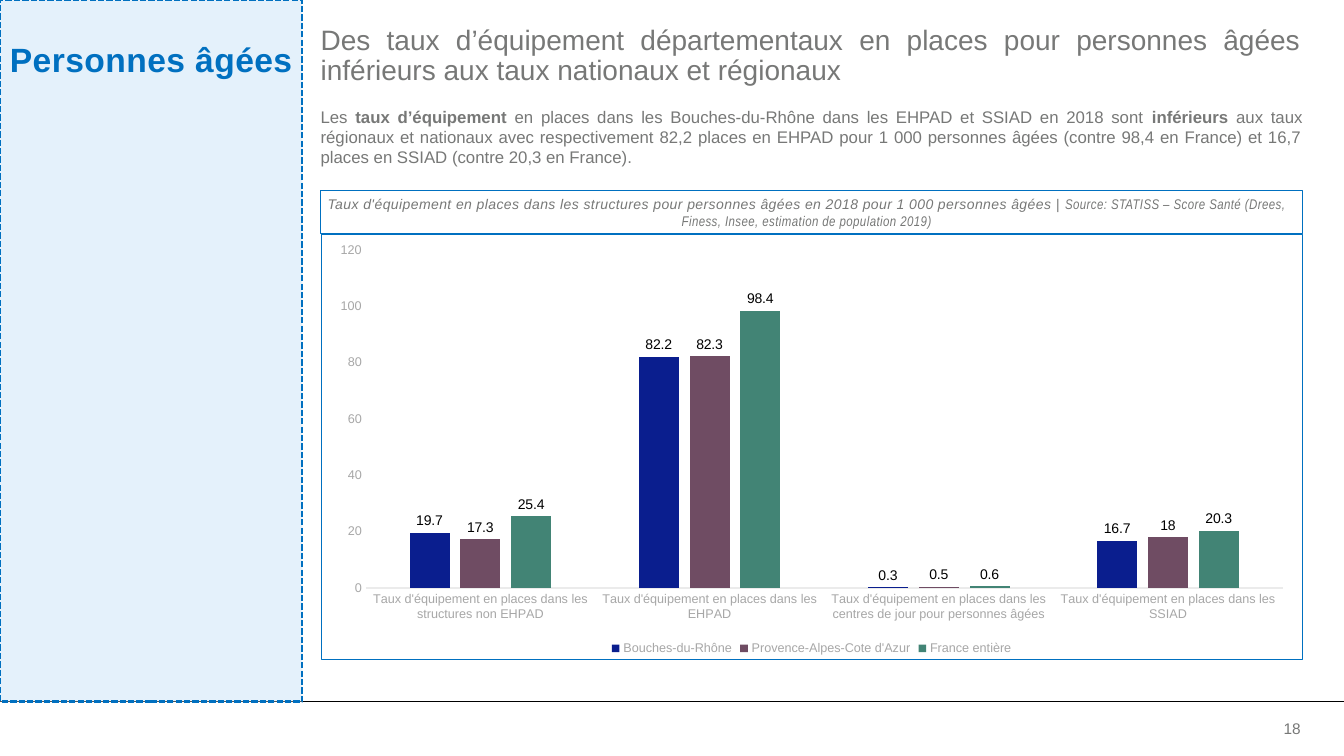
from lxml.etree import SubElement
from pptx import Presentation
from pptx.chart.data import CategoryChartData
from pptx.dml.color import RGBColor
from pptx.enum.chart import XL_CHART_TYPE, XL_LABEL_POSITION, XL_LEGEND_POSITION, XL_TICK_MARK
from pptx.enum.dml import MSO_LINE
from pptx.enum.shapes import MSO_CONNECTOR, MSO_SHAPE
from pptx.enum.text import MSO_ANCHOR, PP_ALIGN
from pptx.oxml import parse_xml
from pptx.oxml.ns import nsdecls, qn
from pptx.util import Inches, Pt

BLUE, PALE_BLUE, GREY, LIGHT_GREY, AXIS_GREY, BLACK = (
    "0070C0", "E4F1FB", "777877", "A7A7A7", "EBEBEB", "000000")

SECTION = [("Personnes âgées", {"bold": True})]
TITLE = [("Des taux d’équipement départementaux en places pour personnes âgées "
          "inférieurs aux taux nationaux et régionaux", {})]
SUMMARY = [
    ("Les ", {}),
    ("taux d’équipement ", {"bold": True}),
    ("en places dans les Bouches-du-Rhône dans les EHPAD et SSIAD en 2018 sont ", {}),
    ("inférieurs ", {"bold": True}),
    ("aux taux régionaux et nationaux avec respectivement 82,2 places en EHPAD pour "
     "1 000 personnes âgées (contre 98,4 en France) et 16,7 places en SSIAD "
     "(contre 20,3 en France).", {}),
]
CAPTION = [
    ("Taux d'équipement en places dans les structures pour personnes âgées en 2018 "
     "pour 1 000 personnes âgées | ", {"italic": True}),
    ("Source: STATISS – Score Santé (Drees, Finess, Insee, estimation de population 2019)",
     {"italic": True, "name": "Arial Narrow"}),
]
PAGE_NUMBER = [("18", {})]
CATEGORIES = ["Taux d'équipement en places dans les " + structure for structure in (
    "structures non EHPAD", "EHPAD", "centres de jour pour personnes âgées", "SSIAD")]
SERIES = [
    ("Bouches-du-Rhône", "0A1E8E", (19.7, 82.2, 0.3, 16.7)),
    ("Provence-Alpes-Cote d'Azur", "6F4C63", (17.3, 82.3, 0.5, 18)),
    ("France entière", "428475", (25.4, 98.4, 0.6, 20.3)),
]

WIDTH, HEIGHT = 13.33, 7.5
FOOTER_TOP = 6.96
SIDEBAR_WIDTH = 3
LEFT, CONTENT_WIDTH = 3.18, 9.74
CAPTION_TOP, CAPTION_HEIGHT, CHART_HEIGHT = 1.89, 0.43, 4.23


def color(hex_string):
    return RGBColor.from_string(hex_string)


def set_attributes(target, values):
    for name, value in values.items():
        setattr(target, name, value)


def style_font(font, size, hex_string, **extra):
    set_attributes(font, {"name": "Arial", "size": Pt(size), **extra})
    font.color.rgb = color(hex_string)


def write(shape, runs, size, align, insets, hex_string=GREY,
          anchor=MSO_ANCHOR.TOP, line_spacing=1.0, letter_spacing=0):
    """Fill a shape with one paragraph; insets are left, top, right, bottom in inches."""
    frame = shape.text_frame
    left, top, right, bottom = map(Inches, insets)
    set_attributes(frame, {
        "word_wrap": True, "vertical_anchor": anchor, "margin_left": left,
        "margin_top": top, "margin_right": right, "margin_bottom": bottom})
    paragraph = frame.paragraphs[0]
    set_attributes(paragraph, {"alignment": align, "line_spacing": line_spacing})
    for text, emphasis in runs:
        run = paragraph.add_run()
        run.text = text
        style_font(run.font, size, hex_string, **emphasis)
        if letter_spacing:
            run._r.get_or_add_rPr().set("spc", str(int(letter_spacing * 100)))


def add_text(slide, box, *args, **options):
    write(slide.shapes.add_textbox(*map(Inches, box)), *args, **options)


def add_panel(slide, box, line_width, fill=None, dash=None):
    panel = slide.shapes.add_shape(MSO_SHAPE.RECTANGLE, *map(Inches, box))
    panel.shadow.inherit = False
    if fill:
        panel.fill.solid()
        panel.fill.fore_color.rgb = color(fill)
    else:
        panel.fill.background()
    panel.line.color.rgb = color(BLUE)
    set_attributes(panel.line, {"width": Pt(line_width), "dash_style": dash})
    return panel


def add_footer_line(slide):
    line = slide.shapes.add_connector(
        MSO_CONNECTOR.STRAIGHT, 0, Inches(FOOTER_TOP), Inches(WIDTH), Inches(FOOTER_TOP))
    line.line.color.rgb = color(BLACK)
    line.line.width = Pt(0.75)
    SubElement(line._element.spPr, qn("a:effectLst"))


def add_rate_chart(slide, box):
    data = CategoryChartData()
    data.categories = CATEGORIES
    for name, _, values in SERIES:
        data.add_series(name, values)
    chart = slide.shapes.add_chart(
        XL_CHART_TYPE.COLUMN_CLUSTERED, *map(Inches, box), data).chart
    style_font(chart.font, 10, BLACK)
    set_attributes(chart, {"has_title": False, "has_legend": True})
    set_attributes(chart.legend, {
        "position": XL_LEGEND_POSITION.BOTTOM, "include_in_layout": False})
    style_font(chart.legend.font, 9, LIGHT_GREY)

    for axis in (chart.category_axis, chart.value_axis):
        set_attributes(axis, {
            "has_major_gridlines": False, "major_tick_mark": XL_TICK_MARK.NONE,
            "minor_tick_mark": XL_TICK_MARK.NONE})
        style_font(axis.tick_labels.font, 9, LIGHT_GREY)
    chart.category_axis.format.line.color.rgb = color(AXIS_GREY)
    chart.category_axis.format.line.width = Pt(0.75)
    chart.value_axis.format.line.fill.background()
    set_attributes(chart.value_axis, {
        "minimum_scale": 0, "maximum_scale": 120, "major_unit": 20})

    plot = chart.plots[0]
    set_attributes(plot, {"gap_width": 219, "overlap": -27, "vary_by_categories": False})
    for series, (_, fill, _) in zip(plot.series, SERIES):
        series.format.fill.solid()
        series.format.fill.fore_color.rgb = color(fill)
        set_attributes(series.data_labels, {
            "show_value": True, "position": XL_LABEL_POSITION.OUTSIDE_END})
        style_font(series.data_labels.font, 10, BLACK)

    border = parse_xml(
        f'<c:spPr {nsdecls("c", "a")}><a:noFill/><a:ln w="{Pt(0.75)}"><a:solidFill>'
        f'<a:srgbClr val="{BLUE}"/></a:solidFill></a:ln></c:spPr>')
    chart._chartSpace.find(qn("c:chart")).addnext(border)


def main():
    presentation = Presentation()
    set_attributes(presentation, {
        "slide_width": Inches(WIDTH), "slide_height": Inches(HEIGHT)})
    slide = presentation.slides.add_slide(presentation.slide_layouts[6])

    add_footer_line(slide)
    add_text(slide, (LEFT, 0.26, 9.82, 0.65), TITLE, 20, PP_ALIGN.JUSTIFY,
             (0, 0, 0.1, 0.05), line_spacing=0.9)
    sidebar = add_panel(slide, (0, 0, SIDEBAR_WIDTH, FOOTER_TOP), 1.5,
                        PALE_BLUE, MSO_LINE.SQUARE_DOT)
    write(sidebar, SECTION, 24, PP_ALIGN.CENTER, (0.08, 0.39, 0.08, 0.08),
          BLUE, letter_spacing=0.3)
    caption = add_panel(slide, (LEFT, CAPTION_TOP, CONTENT_WIDTH, CAPTION_HEIGHT), 0.75)
    write(caption, CAPTION, 10, PP_ALIGN.CENTER, (0, 0.05, 0.1, 0.05), letter_spacing=0.3)
    add_rate_chart(slide, (LEFT, CAPTION_TOP + CAPTION_HEIGHT, CONTENT_WIDTH, CHART_HEIGHT))
    add_text(slide, (LEFT, 1.06, CONTENT_WIDTH, 0.7), SUMMARY, 12, PP_ALIGN.JUSTIFY,
             (0, 0, 0, 0.08))
    add_text(slide, (12.27, FOOTER_TOP, 0.73, 0.53), PAGE_NUMBER, 11, PP_ALIGN.RIGHT,
             (0.1, 0.05, 0.1, 0.05), anchor=MSO_ANCHOR.MIDDLE)
    presentation.save("out.pptx")


if __name__ == "__main__":
    main()
